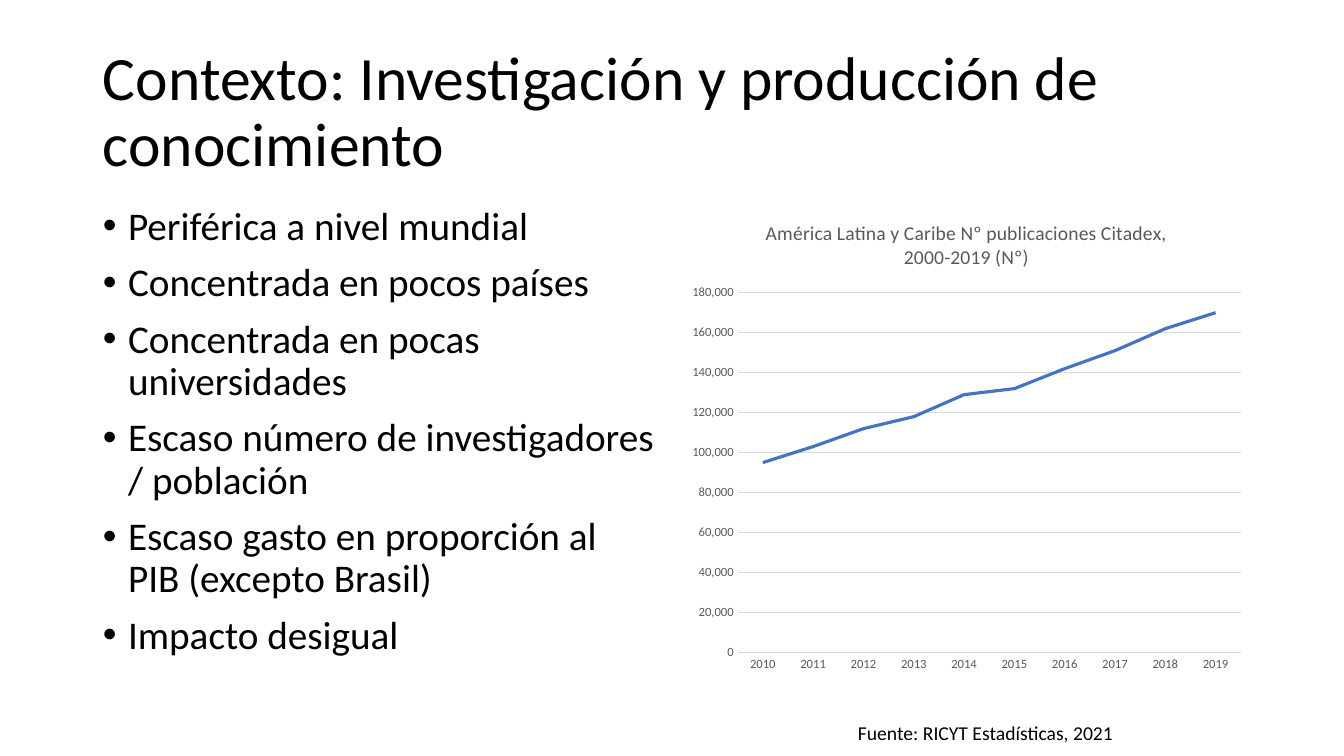
import pptx
import pptx.chart.data
import pptx.dml.color
import pptx.enum.chart
import pptx.enum.text
import pptx.oxml
import pptx.oxml.ns
import pptx.util
from pptx.util import Inches

FONT = "Calibri"
BLACK = pptx.dml.color.RGBColor(0x00, 0x00, 0x00)
GREY = pptx.dml.color.RGBColor(0x59, 0x59, 0x59)
LIGHT_GREY = pptx.dml.color.RGBColor(0xD9, 0xD9, 0xD9)
BLUE = pptx.dml.color.RGBColor(0x44, 0x72, 0xC4)

POINTS = [
    "Periférica a nivel mundial",
    "Concentrada en pocos países",
    "Concentrada en pocas universidades",
    "Escaso número de investigadores / población",
    "Escaso gasto en proporción al PIB (excepto Brasil)",
    "Impacto desigual",
]
YEARS = [str(year) for year in range(2010, 2020)]
PUBLICATIONS = [95000, 103000, 112000, 118000, 129000,
                132000, 142000, 151000, 162000, 170000]
CHART_TITLE = ["América Latina y Caribe Nº publicaciones Citadex,", "2000-2019 (Nº)"]


def set_font(font, size, color):
    font.name = FONT
    font.size = pptx.util.Pt(size)
    font.bold = False
    font.color.rgb = color


def set_line(line, color, width):
    line.color.rgb = color
    line.width = pptx.util.Pt(width)


def add_text(tf, text, *, size, color=BLACK, first=True, spacing=None, before=0,
             align=pptx.enum.text.PP_ALIGN.LEFT):
    """Write one paragraph, reusing the empty one when it is the first."""
    p = tf.paragraphs[0] if first else tf.add_paragraph()
    p.alignment = align
    p.line_spacing = spacing
    p.space_before = pptx.util.Pt(before)
    r = p.add_run()
    r.text = text
    set_font(r.font, size, color)
    return p


def place(sp, left, top, width, height):
    sp.left, sp.top = Inches(left), Inches(top)
    sp.width, sp.height = Inches(width), Inches(height)


def add_bullet(p, indent):
    pPr = p._p.get_or_add_pPr()
    pPr.set("marL", str(indent))
    pPr.set("indent", str(-indent))
    ns = pptx.oxml.ns.nsdecls("a")
    pPr.append(pptx.oxml.parse_xml(f'<a:buFont {ns} typeface="Arial"/>'))
    pPr.append(pptx.oxml.parse_xml(f'<a:buChar {ns} char="•"/>'))


def fill_title(sp, text):
    place(sp, 0.92, 0.4, 11.5, 1.45)
    tf = sp.text_frame
    tf.auto_size = pptx.enum.text.MSO_AUTO_SIZE.NONE
    tf.vertical_anchor = pptx.enum.text.MSO_ANCHOR.MIDDLE
    add_text(tf, text, size=44, spacing=0.9)


def fill_list(sp, points):
    place(sp, 0.92, 2, 5.67, 4.76)
    tf = sp.text_frame
    tf.auto_size = pptx.enum.text.MSO_AUTO_SIZE.NONE
    for i, point in enumerate(points):
        p = add_text(tf, point, size=28, first=i == 0, spacing=0.9, before=10)
        add_bullet(p, Inches(0.25))


def set_plot_layout(chart, x, y, w, h):
    """Fix the inner plot area, in fractions of the chart."""
    parts = "".join(f'<c:{tag} val="{val}"/>' for tag, val in
                    [("layoutTarget", "inner"), ("xMode", "edge"), ("yMode", "edge"),
                     ("x", x), ("y", y), ("w", w), ("h", h)])
    plot_area = chart._chartSpace.chart.plotArea
    for layout in plot_area.findall(pptx.oxml.ns.qn("c:layout")):
        plot_area.remove(layout)
    plot_area.insert(0, pptx.oxml.parse_xml(
        f'<c:layout {pptx.oxml.ns.nsdecls("c")}>'
        f'<c:manualLayout>{parts}</c:manualLayout></c:layout>'))


def format_axis(axis):
    axis.major_tick_mark = pptx.enum.chart.XL_TICK_MARK.NONE
    axis.minor_tick_mark = pptx.enum.chart.XL_TICK_MARK.NONE
    set_font(axis.tick_labels.font, 9, GREY)


def add_publications_chart(s):
    data = pptx.chart.data.CategoryChartData(number_format="#,##0")
    data.categories = YEARS
    data.add_series("Series 1", PUBLICATIONS)
    chart = s.shapes.add_chart(pptx.enum.chart.XL_CHART_TYPE.LINE, Inches(6.75), Inches(2),
                               Inches(5.67), Inches(4.76), data).chart
    set_font(chart.font, 10, BLACK)
    chart.has_legend = False
    chart.has_title = True
    for i, text in enumerate(CHART_TITLE):
        add_text(chart.chart_title.text_frame, text, size=14, color=GREY, first=i == 0,
                 align=pptx.enum.text.PP_ALIGN.CENTER)
    chart.chart_title.include_in_layout = False
    set_plot_layout(chart, 0.1, 0.19, 0.88, 0.75)

    years, amounts = chart.category_axis, chart.value_axis
    format_axis(years)
    format_axis(amounts)
    set_line(years.format.line, LIGHT_GREY, 0.75)
    amounts.format.line.fill.background()
    set_line(amounts.major_gridlines.format.line, LIGHT_GREY, 0.75)
    amounts.minimum_scale, amounts.maximum_scale, amounts.major_unit = 0, 180000, 20000
    amounts.tick_labels.number_format = "#,##0"
    amounts.tick_labels.number_format_is_linked = False

    plot = chart.plots[0]
    plot.vary_by_categories = False
    series = plot.series[0]
    series.smooth = False
    series.marker.style = pptx.enum.chart.XL_MARKER_STYLE.NONE
    set_line(series.format.line, BLUE, 2.25)


def add_source(s, text):
    tf = s.shapes.add_textbox(Inches(8.41), Inches(7.1), Inches(2.76), Inches(0.34)).text_frame
    tf.word_wrap = False
    tf.auto_size = pptx.enum.text.MSO_AUTO_SIZE.SHAPE_TO_FIT_TEXT
    add_text(tf, text, size=14)


def main():
    prs = pptx.Presentation()
    prs.slide_width, prs.slide_height = Inches(13.33), Inches(7.5)
    s = prs.slides.add_slide(prs.slide_layouts[1])
    fill_title(s.shapes.title, "Contexto: Investigación y producción de conocimiento")
    fill_list(s.placeholders[1], POINTS)
    add_publications_chart(s)
    add_source(s, "Fuente: RICYT Estadísticas, 2021")
    prs.save("out.pptx")


if __name__ == "__main__":
    main()
